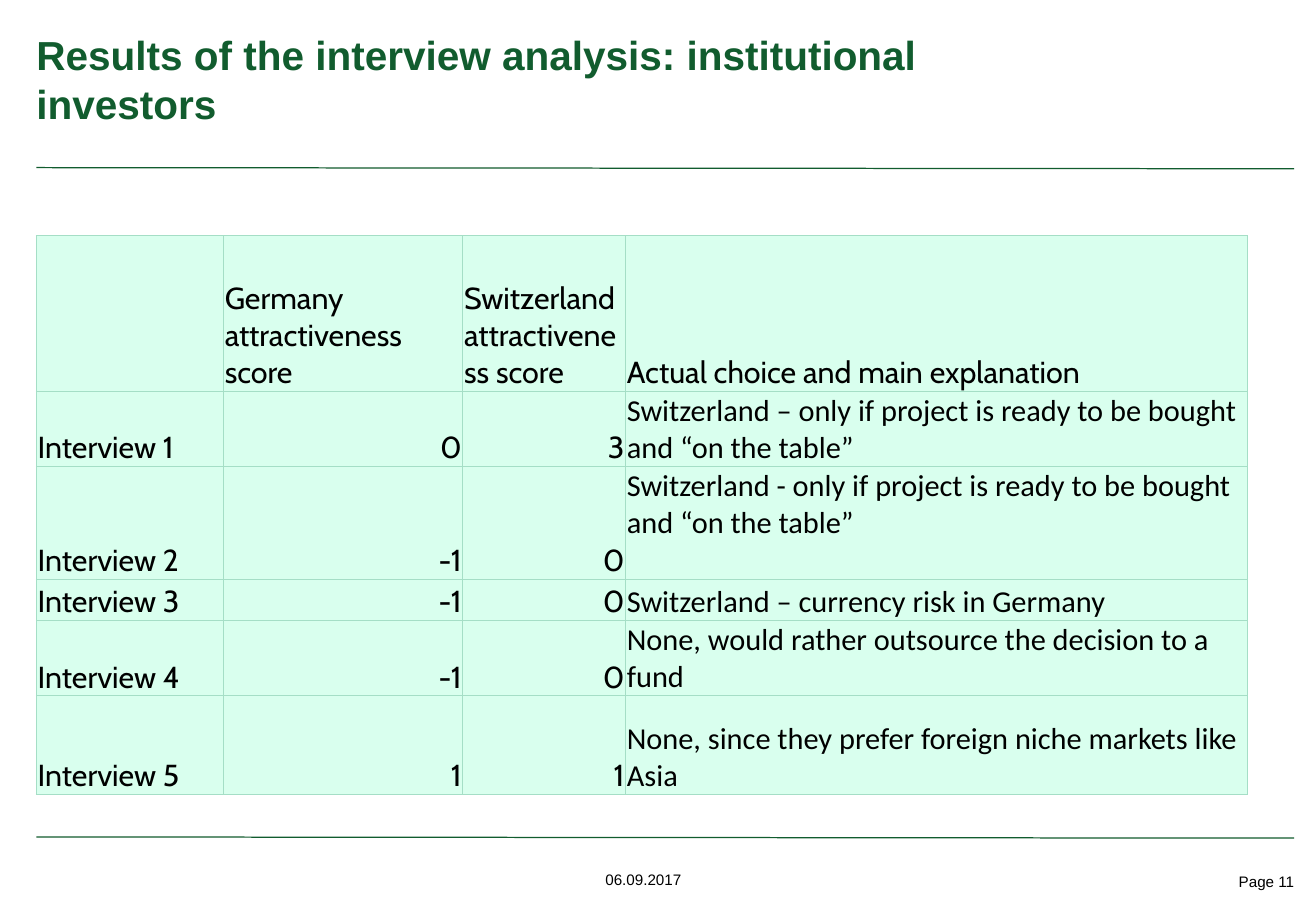
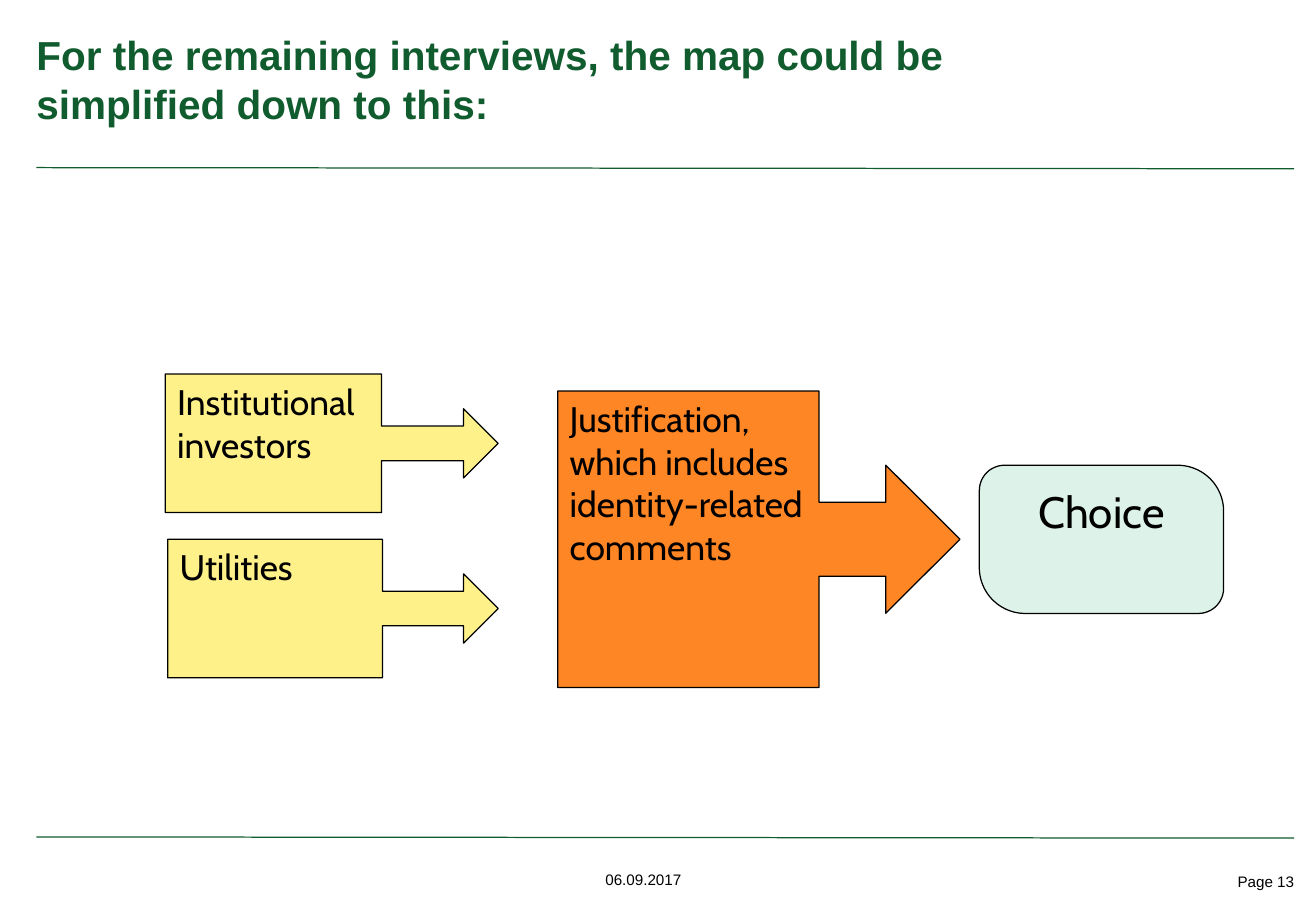
from pptx import Presentation, util as u
from pptx.dml import color
from pptx.enum import shapes, text
from pptx.oxml import parse_xml, ns
from lxml import etree

W, H = u.Inches(10.83), u.Inches(7.5)
GREEN, BLACK, YELLOW, ORANGE, MINT = "115C2E", "000000", "FFF18A", "FF8624", "DDF3EA"
CELL, GRID = "D9FFEE", "A5DEC6"
LEFT, RIGHT = 2.77, 98.34
AL, ANC, SH = text.PP_ALIGN, text.MSO_ANCHOR, shapes.MSO_SHAPE
rgb = color.RGBColor.from_string


def share(x, y, w, h):
    return [int(n * side / 100) for n, side in zip((x, y, w, h), (W, H, W, H))]


def write(tf, words, size, face, hue=BLACK, bold=False, align=AL.LEFT, anchor=ANC.TOP, inset=None):
    tf.word_wrap = True
    tf.vertical_anchor = anchor
    if inset is not None:
        for side in ("left", "top", "right", "bottom"):
            setattr(tf, "margin_" + side, u.Inches(inset))
    p = tf.paragraphs[0]
    p.alignment = align
    r = p.add_run()
    r.text = words
    for key, value in {"size": u.Pt(size), "name": face, "bold": bold}.items():
        setattr(r.font, key, value)
    r.font.color.rgb = rgb(hue)


prs = Presentation()
prs.slide_width, prs.slide_height = W, H

titles = {
    11: "Results of the interview analysis: institutional investors",
    13: "For the remaining interviews, the map could be simplified down to this:",
}
for page, title in titles.items():
    s = prs.slides.add_slide(prs.slide_layouts[6])
    for top, end in ((18.4, 18.53), (91.87, 92)):
        x1, y1, x2, y2 = share(LEFT, top, RIGHT, end)
        rule = s.shapes.add_connector(shapes.MSO_CONNECTOR.STRAIGHT, x1, y1, x2, y2)
        rule.line.color.rgb = rgb(GREEN)
        rule.line.width = u.Pt(0.75)
        etree.SubElement(rule._element.spPr, ns.qn("a:effectLst"))
    for place, words, fmt in (
        ((LEFT, 3.33, 79.59, 12), title, {"size": 24, "hue": GREEN, "bold": True, "inset": 0}),
        ((38.13, 93.87, 21.51, 5.33), "06.09.2017", {"size": 9, "align": AL.CENTER, "anchor": ANC.MIDDLE}),
        ((86.24, 95.73, 12.1, 2), f"Page {page}", {"size": 9, "align": AL.RIGHT, "inset": 0}),
    ):
        write(s.shapes.add_textbox(*share(*place)).text_frame, words, face="Arial", **fmt)

results, flow = prs.slides

cols = (14.22, 18.19, 12.37, 47.28)
rows = (17.07, 8.27, 12.4, 4.53, 8.27, 10.8)
data = [
    ("", "Germany attractiveness score", "Switzerland attractiveness score", "Actual choice and main explanation"),
    ("Interview 1", "0", "3", "Switzerland – only if project is ready to be bought and “on the table”"),
    ("Interview 2", "-1", "0", "Switzerland - only if project is ready to be bought and “on the table”"),
    ("Interview 3", "-1", "0", "Switzerland – currency risk in Germany"),
    ("Interview 4", "-1", "0", "None, would rather outsource the decision to a fund"),
    ("Interview 5", "1", "1", "None, since they prefer foreign niche markets like Asia"),
]
place = share(LEFT, 25.87, sum(cols), sum(rows))
tbl = results.shapes.add_table(len(rows), len(cols), *place).table
tbl.first_row = tbl.horz_banding = False
for col, width in zip(tbl.columns, cols):
    col.width = int(width * W / 100)
for row, height in zip(tbl.rows, rows):
    row.height = int(height * H / 100)
for i, values in enumerate(data):
    for j, value in enumerate(values):
        cell = tbl.cell(i, j)
        for side in "LRTB":
            cell._tc.get_or_add_tcPr().append(parse_xml(
                f'<a:ln{side} {ns.nsdecls("a")} w="9525"><a:solidFill>'
                f'<a:srgbClr val="{GRID}"/></a:solidFill></a:ln{side}>'))
        cell.fill.solid()
        cell.fill.fore_color.rgb = rgb(CELL)
        for side, inset in {"left": 0.01, "top": 0.01, "right": 0.01, "bottom": 0}.items():
            setattr(cell, "margin_" + side, u.Inches(inset))
        cell.vertical_anchor = ANC.TOP if (i, j) == (2, 3) else ANC.BOTTOM
        if value:
            p = cell.text_frame.paragraphs[0]
            p.alignment = AL.RIGHT if i and j in (1, 2) else AL.LEFT
            r = p.add_run()
            r.text = value
            face = "Calibri" if i and j == 3 else "Cabin"
            for key, val in {"size": u.Pt(18), "name": face}.items():
                setattr(r.font, key, val)
            r.font.color.rgb = rgb(BLACK)

callout = SH.RIGHT_ARROW_CALLOUT
for kind, place, fill, words, size, align in (
    (callout, (12.56, 41.07, 25.3, 15.2), YELLOW, "Institutional investors", 21, AL.LEFT),
    (callout, (12.74, 59.2, 25.12, 15.2), YELLOW, "Utilities", 21, AL.LEFT),
    (SH.ROUND_2_DIAG_RECTANGLE, (74.42, 51.07, 18.56, 16.27), MINT, "Choice", 26, AL.CENTER),
    (callout, (42.38, 42.93, 30.56, 32.53), ORANGE,
     "Justification, which includes identity-related comments", 21, AL.LEFT),
):
    sp = flow.shapes.add_shape(kind, *share(*place))
    sp.shadow.inherit = False
    sp.fill.solid()
    sp.fill.fore_color.rgb = rgb(fill)
    sp.line.color.rgb = rgb(BLACK)
    sp.line.width = u.Pt(0.75)
    if kind != callout:
        sp.adjustments[0], sp.adjustments[1] = 0.17, 0.31
    write(sp.text_frame, words, size, "Cabin", align=align)

prs.save("out.pptx")
